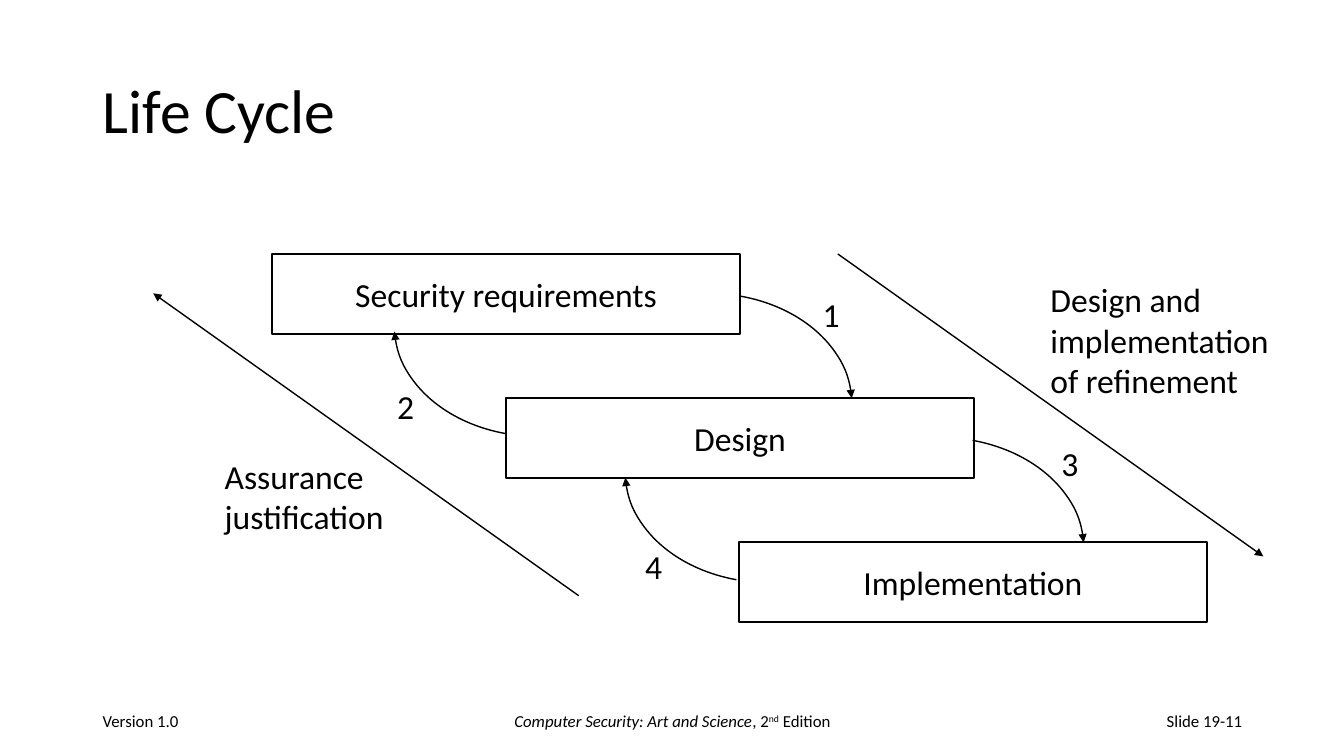
"""Build the Life Cycle slide: three stepped stages linked by numbered arcs."""
import pptx
import pptx.dml.color
import pptx.enum.shapes
import pptx.enum.text
import pptx.oxml.ns
import pptx.util
from lxml import etree

PX = 9144
BLACK = pptx.dml.color.RGBColor(0, 0, 0)
WHITE = pptx.dml.color.RGBColor(255, 255, 255)
ALIGN = pptx.enum.text.PP_ALIGN
ANCHOR = pptx.enum.text.MSO_ANCHOR
SHAPE = pptx.enum.shapes.MSO_SHAPE
qn = pptx.oxml.ns.qn


def write(sp, text, size=24, align=ALIGN.LEFT, anchor=ANCHOR.TOP, wrap=True, italic=False):
    """Add a formatted run to the first paragraph of a shape."""
    tf = sp.text_frame
    tf.word_wrap = wrap
    tf.vertical_anchor = anchor
    p = tf.paragraphs[0]
    p.alignment = align
    r = p.add_run()
    r.text = text
    r.font.name = "Calibri"
    r.font.size = pptx.util.Pt(size)
    r.font.italic = italic
    r.font.color.rgb = BLACK
    return r


def draw_arrow(sp):
    """Give a shape a thin black line with an arrowhead at its end."""
    sp.line.color.rgb = BLACK
    sp.line.width = pptx.util.Pt(1)
    etree.SubElement(sp.line._get_or_add_ln(), qn("a:tailEnd"), type="triangle")


prs = pptx.Presentation()
prs.slide_width = 1333 * PX
prs.slide_height = 750 * PX
s = prs.slides.add_slide(prs.slide_layouts[5])
s.background.fill.solid()
s.background.fill.fore_color.rgb = WHITE

title = s.shapes.title
title.left, title.top, title.width, title.height = [v * PX for v in (92, 40, 1150, 145)]
write(title, "Life Cycle", size=44, anchor=ANCHOR.MIDDLE)
title.text_frame.paragraphs[0].line_spacing = 0.9

footers = [
    (92, 300, ALIGN.LEFT, [("Version 1.0", False, 0)]),
    (442, 450, ALIGN.CENTER, [("Computer Security: Art and Science", True, 0), (", 2", False, 0),
                              ("nd", False, 30000), (" Edition", False, 0)]),
    (942, 300, ALIGN.RIGHT, [("Slide 19-11", False, 0)]),
]
for x, w, align, runs in footers:
    sp = s.shapes.add_textbox(x * PX, 695 * PX, w * PX, 40 * PX)
    for text, italic, baseline in runs:
        r = write(sp, text, size=12, align=align, anchor=ANCHOR.MIDDLE, italic=italic)
        if baseline:
            r.font._element.set("baseline", str(baseline))

stages = ["Security requirements", "Design", "Implementation"]
for x, y, stage in zip((270, 502, 733), range(252, 539, 143), stages):
    sp = s.shapes.add_shape(SHAPE.RECTANGLE, x * PX, y * PX, 464 * PX, 79 * PX)
    sp.shadow.inherit = False
    sp.fill.background()
    sp.line.color.rgb = BLACK
    sp.line.width = pptx.util.Pt(1.5)
    write(sp, stage, align=ALIGN.CENTER, anchor=ANCHOR.MIDDLE)

for x, y, rotation in [(559, 291, 0), (789, 434, 0), (620, 358, 180), (391, 213, 180)]:
    sp = s.shapes.add_shape(SHAPE.ARC, x * PX, y * PX, 286 * PX, 220 * PX)
    sp.shadow.inherit = False
    sp.fill.background()
    sp.rotation = rotation
    sp.adjustments[0] = 172.18
    sp.adjustments[1] = 214.58
    draw_arrow(sp)

for x, y, number in [(806, 287, "1"), (384, 378, "2"), (1043, 434, "3"), (630, 537, "4")]:
    sp = s.shapes.add_textbox(x * PX, y * PX, 37 * PX, 50 * PX)
    write(sp, number, wrap=False)

for x1, y1, x2, y2 in [(831, 252, 1253, 552), (574, 591, 152, 291)]:
    line = s.shapes.add_connector(pptx.enum.shapes.MSO_CONNECTOR.STRAIGHT,
                                  x1 * PX, y1 * PX, x2 * PX, y2 * PX)
    draw_arrow(line)
    etree.SubElement(line._element.spPr, qn("a:effectLst"))

captions = [
    (1032, 272, 131, "Design and implementation of refinement"),
    (213, 447, 91, "Assurance justification"),
]
for x, y, h, caption in captions:
    sp = s.shapes.add_textbox(x * PX, y * PX, 246 * PX, h * PX)
    write(sp, caption)

prs.save("out.pptx")
